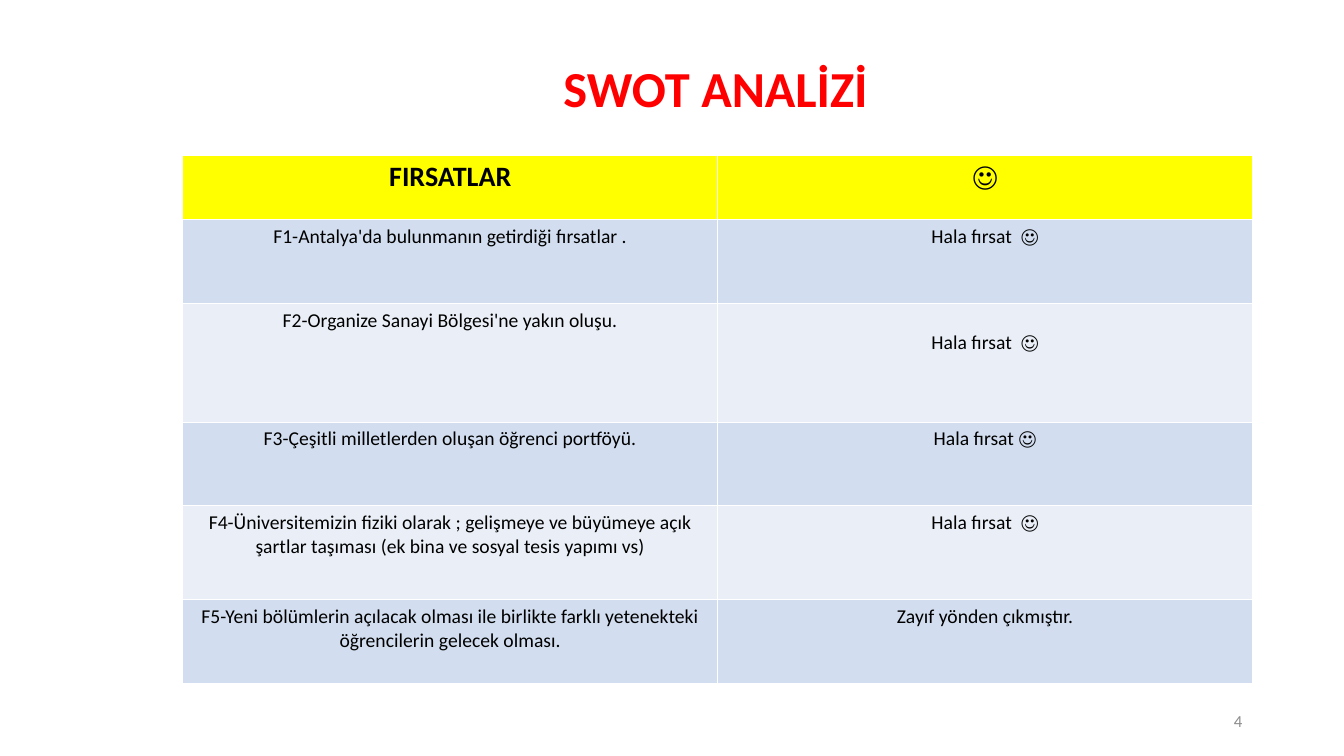
"""Builds the SWOT opportunities slide."""
import dataclasses

import pptx
import pptx.dml.color
import pptx.enum.text
import pptx.util

ALIGN = pptx.enum.text.PP_ALIGN
ANCHOR = pptx.enum.text.MSO_ANCHOR


@dataclasses.dataclass(frozen=True)
class Theme:
    """Colours, font and type sizes of the slide."""
    font: str = "Calibri"
    title: str = "FF0000"
    text: str = "000000"
    muted: str = "8C8C8C"
    header: str = "FFFF00"
    bands: tuple = ("D2DEEF", "EAEFF7")
    title_size: int = 36
    header_size: int = 20
    body_size: int = 14
    number_size: int = 12


class SlideBuilder:
    """Holds the theme and slide; lengths are percentages of the slide's size."""

    def __init__(self, prs, theme):
        """Adds a title-only slide to the presentation."""
        self.prs, self.theme = prs, theme
        self.slide = prs.slides.add_slide(prs.slide_layouts[5])

    def x(self, share):
        """Returns a share of the slide's width."""
        return round(self.prs.slide_width * share / 100)

    def y(self, share):
        """Returns a share of the slide's height."""
        return round(self.prs.slide_height * share / 100)

    def box(self, left, top, width, height):
        """Returns a place on the slide."""
        return self.x(left), self.y(top), self.x(width), self.y(height)

    def set_text(self, tf, text, size, color, align=ALIGN.CENTER, bold=False):
        """Fills a text frame with one formatted paragraph."""
        tf.word_wrap = True
        p = tf.paragraphs[0]
        p.text, p.alignment = text, align
        p.font.name, p.font.size, p.font.bold = self.theme.font, pptx.util.Pt(size), bold
        p.font.color.rgb = pptx.dml.color.RGBColor.from_string(color)

    def title(self, text, place):
        """Moves and fills the title placeholder."""
        sp = self.slide.shapes.title
        sp.left, sp.top, sp.width, sp.height = self.box(*place)
        sp.text_frame.vertical_anchor = ANCHOR.TOP
        self.set_text(sp.text_frame, text, self.theme.title_size, self.theme.title, bold=True)

    def number(self, text, place):
        """Adds the page number."""
        tf = self.slide.shapes.add_textbox(*self.box(*place)).text_frame
        tf.vertical_anchor = ANCHOR.MIDDLE
        self.set_text(tf, text, self.theme.number_size, self.theme.muted, ALIGN.RIGHT)

    def table(self, rows, heights, left, top, width):
        """Adds a table with a header row and banded body, and returns it."""
        place = self.box(left, top, width, sum(heights))
        table = self.slide.shapes.add_table(len(rows), len(rows[0]), *place).table
        for i, (texts, height) in enumerate(zip(rows, heights)):
            table.rows[i].height = self.y(height)
            head = i == 0
            fill = self.theme.header if head else self.theme.bands[(i - 1) % 2]
            size = self.theme.header_size if head else self.theme.body_size
            for cell, text in zip(table.rows[i].cells, texts):
                cell.fill.solid()
                cell.fill.fore_color.rgb = pptx.dml.color.RGBColor.from_string(fill)
                self.set_text(cell.text_frame, text, size, self.theme.text, bold=head)
        return table


ROWS = [
    ("FIRSATLAR", "☺"),
    ("F1-Antalya'da bulunmanın getirdiği fırsatlar .", "Hala fırsat  ☺"),
    ("F2-Organize Sanayi Bölgesi'ne yakın oluşu.", "Hala fırsat  ☺"),
    ("F3-Çeşitli milletlerden oluşan öğrenci portföyü.", "Hala fırsat ☺"),
    ("F4-Üniversitemizin fiziki olarak ; gelişmeye ve büyümeye açık şartlar "
     "taşıması (ek bina ve sosyal tesis yapımı vs)", "Hala fırsat  ☺"),
    ("F5-Yeni bölümlerin açılacak olması ile birlikte farklı yetenekteki "
     "öğrencilerin gelecek olması.", "Zayıf yönden çıkmıştır."),
]
ROW_HEIGHTS = [8.53, 11.07, 15.73, 11.07, 12.4, 11.07]


def main():
    """Builds and saves the slide."""
    prs = pptx.Presentation()
    prs.slide_width, prs.slide_height = pptx.util.Inches(13.33), pptx.util.Inches(7.5)
    s = SlideBuilder(prs, Theme())
    s.title("SWOT ANALİZİ", (24.6, 6.93, 57.3, 9.47))
    s.number("4", (70.67, 92.67, 22.5, 5.33))
    table = s.table(ROWS, ROW_HEIGHTS, 13.6, 20.53, 79.6)
    table.cell(2, 1).margin_top = s.y(3.6)
    prs.save("out.pptx")


if __name__ == "__main__":
    main()
